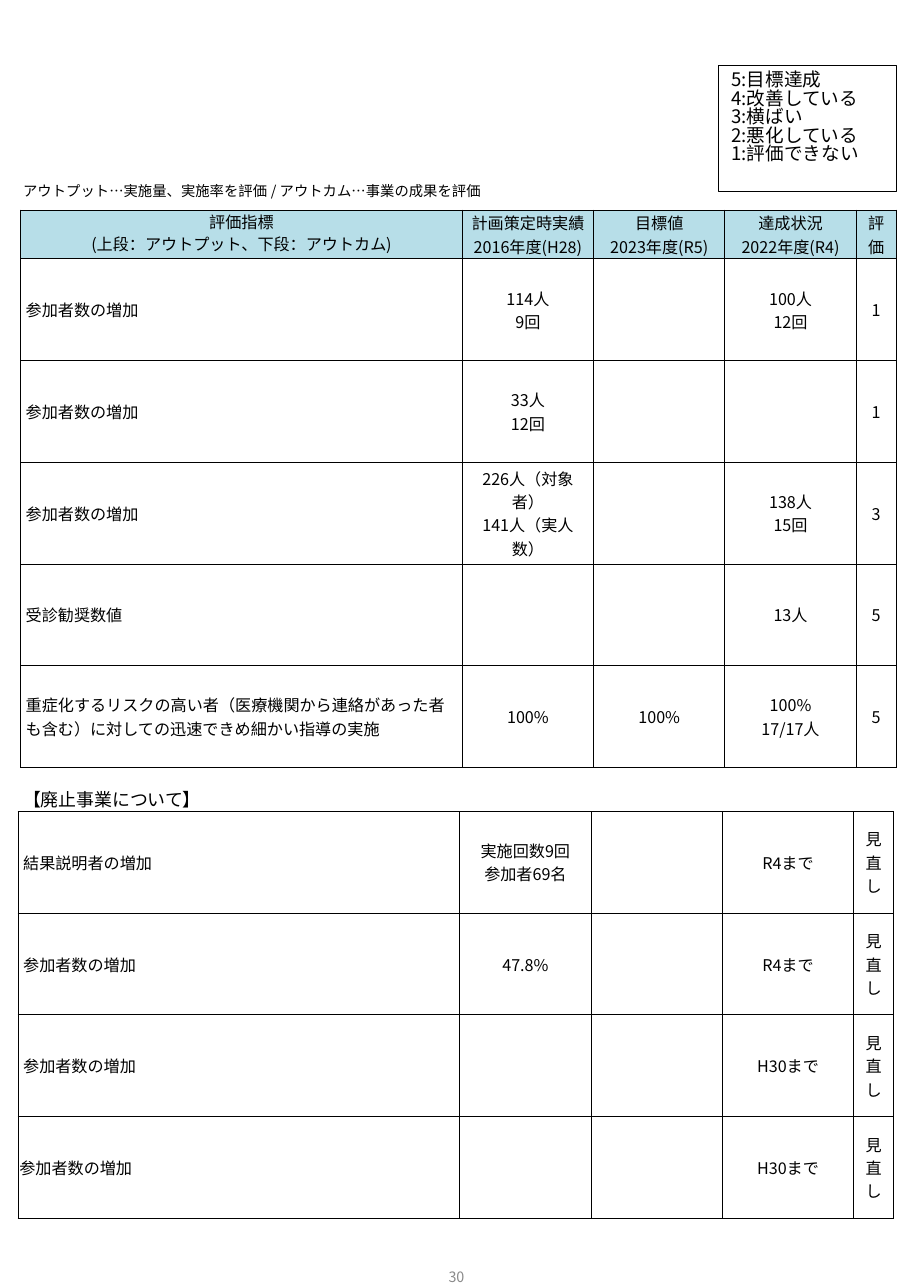
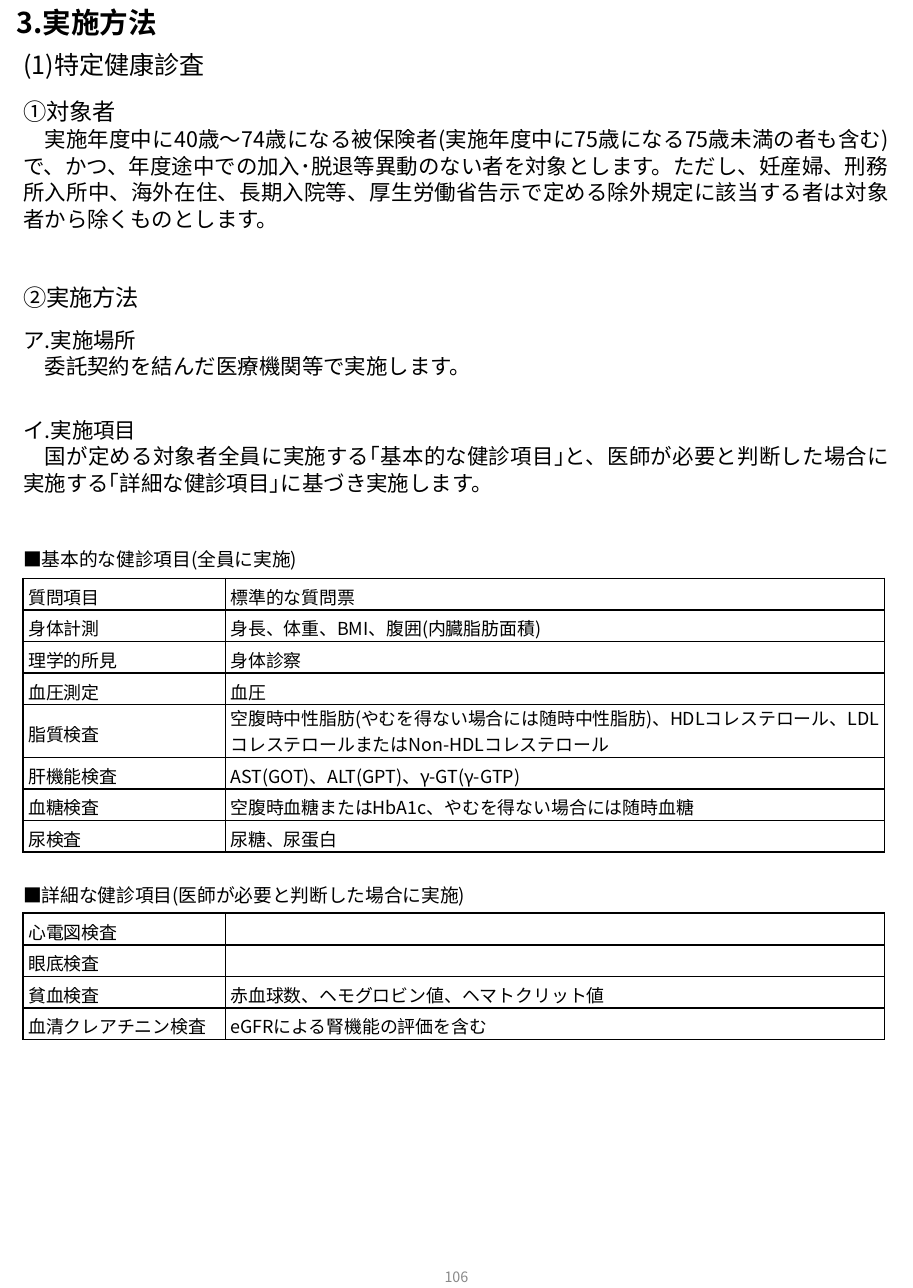
import copy
from dataclasses import dataclass

import pptx
import pptx.dml.color
import pptx.enum.shapes
import pptx.enum.text
import pptx.oxml.ns
import pptx.util
from lxml import etree

Inches, Pt = pptx.util.Inches, pptx.util.Pt
RGB = pptx.dml.color.RGBColor.from_string
qn = pptx.oxml.ns.qn
ALIGN = pptx.enum.text.PP_ALIGN
ANCHOR = pptx.enum.text.MSO_ANCHOR


@dataclass(frozen=True)
class Theme:
    font: str = "Noto Sans CJK JP"
    ink: str = "000000"
    muted: str = "898989"
    header: str = "B7DEE8"
    paper: str = "FFFFFF"
    title: float = 16
    section: float = 14
    heading: float = 13
    body: float = 12
    caption: float = 10.5
    legend: float = 10.4
    item: float = 10
    indicator: float = 9
    small: float = 8
    tight: float = 0.83
    loose: float = 1.03


theme = Theme()


def write(frame, lines, size, align=ALIGN.LEFT, color=theme.ink, bold=False,
          spacing=None, **frame_format):
    """Fill a text frame; a line is text or (text, size), and \\v breaks inside it."""
    for name, value in {"word_wrap": True, **frame_format}.items():
        setattr(frame, name, value)
    for index, line in enumerate(lines):
        text, line_size = line if isinstance(line, tuple) else (line, size)
        paragraph = frame.add_paragraph() if index else frame.paragraphs[0]
        paragraph.text = text
        paragraph.alignment = align
        if spacing:
            paragraph.line_spacing = spacing
        for run in paragraph.runs:
            run.font.color.rgb = RGB(color)
            for name, value in {"size": Pt(line_size), "bold": bold, "name": theme.font}.items():
                setattr(run.font, name, value)
            properties = run.font._element
            etree.SubElement(properties, qn("a:ea"), typeface=theme.font)
        for line_break in paragraph._p.findall(qn("a:br")):
            line_break.append(copy.deepcopy(properties))
        if not text:
            etree.SubElement(paragraph._p, qn("a:endParaRPr"), sz=str(int(line_size * 100)))


def add_grid(slide, place, widths, heights, rows, size, border, centred=(),
             fill=None, margins=(0.04, 0.02, 0.04, 0.02)):
    """Add a bordered table; columns listed in centred are centre-aligned."""
    table = slide.shapes.add_table(
        len(rows), len(widths), *map(Inches, place),
        Inches(sum(widths)), Inches(sum(heights))).table
    table.first_row = table.horz_banding = False
    for column, width in zip(table.columns, widths):
        column.width = Inches(width)
    for row, height, texts in zip(table.rows, heights, rows):
        row.height = Inches(height)
        for index, (cell, text) in enumerate(zip(row.cells, texts)):
            cell.vertical_anchor = ANCHOR.MIDDLE
            for side, margin in zip(("left", "top", "right", "bottom"), margins):
                setattr(cell, f"margin_{side}", Inches(margin))
            write(cell.text_frame, text.split("\n"), size,
                  ALIGN.CENTER if index in centred else ALIGN.LEFT)
            if fill:
                cell.fill.solid()
                cell.fill.fore_color.rgb = RGB(fill)
            else:
                cell.fill.background()
            for order, edge in enumerate(("lnL", "lnR", "lnT", "lnB")):
                line = etree.Element(qn(f"a:{edge}"), w=str(Pt(border)))
                ink = etree.SubElement(line, qn("a:solidFill"))
                etree.SubElement(ink, qn("a:srgbClr"), val=theme.ink)
                cell._tc.tcPr.insert(order, line)
    return table


presentation = pptx.Presentation()
presentation.slide_width, presentation.slide_height = Inches(7.09), Inches(10)
blank = presentation.slide_layouts[6]
evaluation, method = (presentation.slides.add_slide(blank) for _ in range(2))

# Page numbers
for slide, number in ((evaluation, "30"), (method, "106")):
    footer = slide.shapes.add_textbox(*map(Inches, (2.72, 9.65, 1.65, 0.53)))
    write(footer.text_frame, [number], theme.small, ALIGN.CENTER, theme.muted,
          vertical_anchor=ANCHOR.MIDDLE)

# Evaluation: rating legend
legend = evaluation.shapes.add_shape(
    pptx.enum.shapes.MSO_SHAPE.RECTANGLE, *map(Inches, (5.58, 0.51, 1.38, 0.98)))
legend.shadow.inherit = False
legend.fill.background()
legend.line.color.rgb = RGB(theme.ink)
legend.line.width = Pt(0.75)
write(legend.text_frame,
      ["5:目標達成", "4:改善している", "3:横ばい", "2:悪化している", "1:評価できない"],
      theme.legend, spacing=theme.tight, vertical_anchor=ANCHOR.TOP)

# Evaluation: indicators
indicator_widths = (3.43, 1.02, 1.02, 1.02, 0.31)
indicator_height = 0.79
current = [
    ("評価指標\n(上段：アウトプット、下段：アウトカム)", "計画策定時実績\n2016年度(H28)",
     "目標値\n2023年度(R5)", "達成状況\n2022年度(R4)", "評価"),
    ("参加者数の増加", "114人\v9回", "", "100人\v12回", "1"),
    ("参加者数の増加", "33人\v12回", "", "", "1"),
    ("参加者数の増加", "226人（対象者）\v141人（実人数）", "", "138人\v15回", "3"),
    ("受診勧奨数値", "", "", "13人", "5"),
    ("重症化するリスクの高い者（医療機関から連絡があった者も含む）に対しての迅速できめ細かい指導の実施",
     "100%", "100%", "100%\v17/17人", "5"),
]
current_table = add_grid(
    evaluation, (0.16, 1.63), indicator_widths, [0.38] + [indicator_height] * 5,
    current, theme.indicator, 0.5, centred=range(1, 5))
for heading in current_table.rows[0].cells:
    heading.margin_top = heading.margin_bottom = 0
    heading.fill.solid()
    heading.fill.fore_color.rgb = RGB(theme.header)
scope = current_table.cell(0, 0).text_frame
scope.paragraphs[0].line_spacing = 0.8
for paragraph in scope.paragraphs:
    paragraph.alignment = ALIGN.CENTER

discontinued = [
    ("結果説明者の増加", "実施回数9回\v参加者69名", "", "R4まで", "見直し"),
    ("参加者数の増加", "47.8%", "", "R4まで", "見直し"),
    ("参加者数の増加", "", "", "H30まで", "見直し"),
    ("参加者数の増加", "", "", "H30まで", "見直し"),
]
discontinued_table = add_grid(
    evaluation, (0.14, 6.3), indicator_widths, [indicator_height] * 4,
    discontinued, theme.indicator, 0.5, centred=range(1, 5))
discontinued_table.cell(3, 0).margin_left = Inches(0.01)

# Method: examination items
item_widths = (1.57, 5.12)
item_height = 0.98 / 4
basic_items = [
    ("質問項目", "標準的な質問票"),
    ("身体計測", "身長、体重、BMI、腹囲(内臓脂肪面積)"),
    ("理学的所見", "身体診察"),
    ("血圧測定", "血圧"),
    ("脂質検査", "空腹時中性脂肪(やむを得ない場合には随時中性脂肪)、HDLコレステロール、"
                 "LDLコレステロールまたはNon-HDLコレステロール"),
    ("肝機能検査", "AST(GOT)、ALT(GPT)、γ-GT(γ-GTP)"),
    ("血糖検査", "空腹時血糖またはHbA1c、やむを得ない場合には随時血糖"),
    ("尿検査", "尿糖、尿蛋白"),
]
detailed_items = [
    ("心電図検査", ""),
    ("眼底検査", ""),
    ("貧血検査", "赤血球数、ヘモグロビン値、ヘマトクリット値"),
    ("血清クレアチニン検査", "eGFRによる腎機能の評価を含む"),
]
basic_heights = [item_height] * len(basic_items)
basic_heights[4] = 0.41
for top, heights, items in ((4.49, basic_heights, basic_items),
                            (7.09, [item_height] * 4, detailed_items)):
    item_table = add_grid(method, (0.18, top), item_widths, heights, items, theme.item, 1,
                          fill=theme.paper, margins=(0.04, 0.04, 0.04, 0))
    if items is basic_items:
        item_table.cell(4, 1).margin_top = 0

# Headings and running text: slide, place, vertical inset, lines, size, format
passages = [
    (evaluation, (0.18, 1.33, 4.09, 0.3), 0.05,
     ["アウトプット…実施量、実施率を評価 / アウトカム…事業の成果を評価"], theme.small,
     {"spacing": theme.loose, "vertical_anchor": ANCHOR.MIDDLE}),
    (evaluation, (0.18, 6.07, 2.06, 0.27), 0.05, ["【廃止事業について】"], theme.item, {}),
    (method, (0.13, -0.01, 6.32, 0.37), 0.05, ["3.実施方法"], theme.title,
     {"bold": True, "vertical_anchor": ANCHOR.MIDDLE}),
    (method, (0.18, 0.33, 6.32, 0.4), 0.05, ["(1)特定健康診査"], theme.section,
     {"spacing": theme.loose}),
]
body_passages = [
    (0.75, 0.85, [
        ("①対象者", theme.heading),
        "\u3000実施年度中に40歳～74歳になる被保険者(実施年度中に75歳になる75歳未満の者も含む)で、"
        "かつ、年度途中での加入･脱退等異動のない者を対象とします。ただし、妊産婦、刑務所入所中、"
        "海外在住、長期入院等、厚生労働省告示で定める除外規定に該当する者は対象者から除くものとします。"]),
    (2.19, 0.24, [("②実施方法", theme.heading)]),
    (2.53, 0.51, ["ア.実施場所", "\u3000委託契約を結んだ医療機関等で実施します。"]),
    (3.23, 0.72, [
        "イ.実施項目",
        "\u3000国が定める対象者全員に実施する｢基本的な健診項目｣と、医師が必要と判断した場合に"
        "実施する｢詳細な健診項目｣に基づき実施します。"]),
    (4.25, 0.19, [("■基本的な健診項目(全員に実施)", theme.caption)]),
    (6.86, 0.19, [("■詳細な健診項目(医師が必要と判断した場合に実施)", theme.caption)]),
]
for top, height, lines in body_passages:
    passages.append((method, (0.18, top, 6.82, height), 0, lines, theme.body,
                     {"spacing": theme.loose, "margin_right": Inches(0.1)}))
for slide, place, inset, lines, size, text_format in passages:
    passage = slide.shapes.add_textbox(*map(Inches, place))
    settings = {"margin_left": 0, "margin_right": 0,
                "margin_top": Inches(inset), "margin_bottom": Inches(inset)}
    write(passage.text_frame, lines, size,
          ALIGN.JUSTIFY if slide is method else ALIGN.LEFT, **{**settings, **text_format})

presentation.save("out.pptx")
